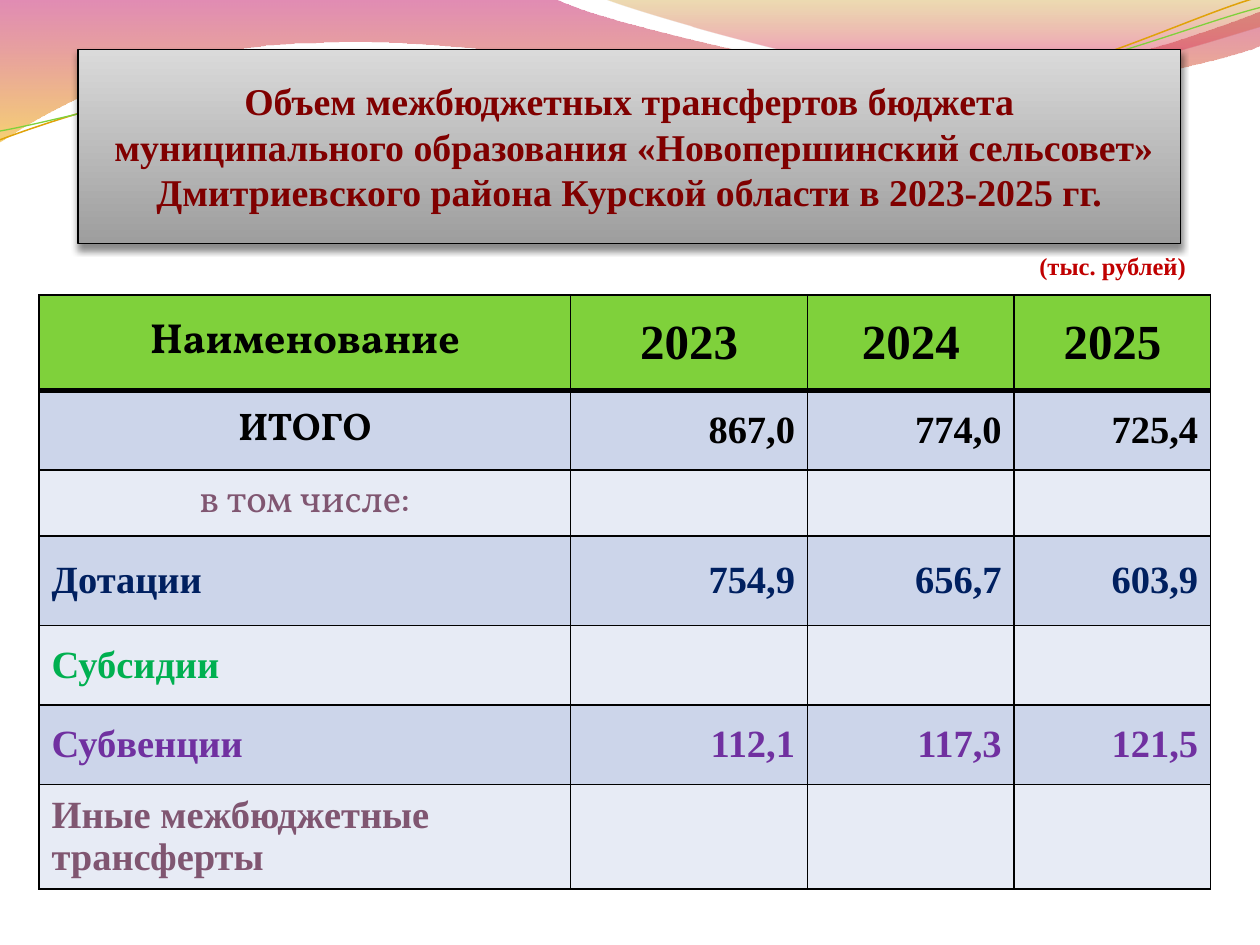
"""Build a slide with a budget transfer table under a decorated title."""
from typing import NamedTuple

import pptx
import pptx.dml.color
import pptx.enum.text
import pptx.oxml
import pptx.oxml.ns
import pptx.util
from pptx.util import Inches

COLORS = {
    "black": "000000", "maroon": "800000", "red": "C00000", "green": "7FD13B",
    "amber": "E0A209", "dark_band": "CCD5EA", "light_band": "E7EBF5",
    "mauve": "805671", "navy": "002060", "emerald": "00B050", "purple": "7030A0",
    "pink": "BD0059", "orange": "F0AB00", "ochre": "C38B00", "rose": "E1006B",
    "silver": "DADADA", "gray": "9E9E9E",
}
SERIF = "Times New Roman"
HEADING = "Vollkorn"
ALIGN = pptx.enum.text.PP_ALIGN
MIDDLE = pptx.enum.text.MSO_ANCHOR.MIDDLE


class Stop(NamedTuple):
    position: int
    color: str
    opacity: int


class Wave(NamedTuple):
    start: tuple
    segments: list
    stops: list


class Strand(NamedTuple):
    start: tuple
    segments: list
    color: str
    width: float


class Row(NamedTuple):
    label: str
    values: tuple
    height: float
    fill: str
    color: str
    label_font: str = SERIF
    label_align: ALIGN = ALIGN.LEFT
    value_align: ALIGN = ALIGN.RIGHT
    label_size: float = 22
    value_size: float = 22
    bold: bool = True


WAVES = [
    Wave((0, -0.01), [
        [(4.4, -0.01)],
        [(4.76, 0.17), (6.64, 0.63), (7.58, 0.63)],
        [(8.53, 0.63), (9.58, 0.26), (10, 0.09)],
        [(10.01, 0.36)],
        [(9.83, 0.44), (8.7, 0.76), (7.46, 0.75)],
        [(6.22, 0.75), (3.82, 0.28), (2.57, 0.34)],
        [(1.29, 0.35), (0.46, 0.83), (-0.01, 1.13)],
    ], [Stop(0, "pink", 45), Stop(100, "orange", 55)]),
    Wave((4.79, -0.01), [
        [(5.09, 0.11), (6.82, 0.62), (7.69, 0.65)],
        [(8.56, 0.69), (9.61, 0.32), (10, 0.21)],
        [(10, 0)],
    ], [Stop(0, "ochre", 30), Stop(80, "rose", 45)]),
]
STRANDS = [
    Strand((0, 1.11), [
        [(0.48, 0.93), (1.58, 0.57), (2.77, 0.52)],
        [(3.95, 0.47), (5.93, 0.89), (7.13, 0.8)],
        [(8.33, 0.71), (9.38, 0.15), (9.98, -0.02)],
    ], "amber", 0.85),
    Strand((0, 1.04), [
        [(0.47, 0.96), (1.64, 0.61), (2.83, 0.56)],
        [(4.03, 0.51), (5.97, 0.83), (7.17, 0.75)],
        [(8.36, 0.67), (9.41, 0.21), (10, 0.06)],
    ], "green", 0.75),
]
COLUMN_WIDTHS = [4.22, 1.88, 1.64, 1.56]
EMPTY = ("", "", "")
ROWS = [
    Row("Наименование", ("2023", "2024", "2025"), 0.76, "green", "black",
        HEADING, ALIGN.CENTER, ALIGN.CENTER, 24, 28),
    Row("ИТОГО", ("867,0", "774,0", "725,4"), 0.63, "dark_band", "black",
        HEADING, ALIGN.CENTER),
    Row("в том числе:", EMPTY, 0.47, "light_band", "mauve",
        HEADING, ALIGN.CENTER, bold=False),
    Row("Дотации", ("754,9", "656,7", "603,9"), 0.71, "dark_band", "navy"),
    Row("Субсидии", EMPTY, 0.63, "light_band", "emerald"),
    Row("Субвенции", ("112,1", "117,3", "121,5"), 0.63, "dark_band", "purple"),
    Row("Иные межбюджетные трансферты", EMPTY, 0.83, "light_band", "mauve"),
]


def rgb(color: str) -> pptx.dml.color.RGBColor:
    """Look up a named colour."""
    return pptx.dml.color.RGBColor.from_string(COLORS[color])


def xml(markup: str):
    """Parse an element whose first tag is in the drawing namespace."""
    tag, rest = markup.split(">", 1)
    return pptx.oxml.parse_xml(f"{tag} {pptx.oxml.ns.nsdecls('a')}>{rest}")


def format_font(font, color: str, **values) -> None:
    """Apply a colour and any other font values."""
    for name, value in values.items():
        setattr(font, name, value)
    font.color.rgb = rgb(color)


def fill_gradient(shape, stops: list) -> None:
    """Fill a shape with a gradient running from top to bottom."""
    shape.fill.gradient()
    shape.fill.gradient_angle = 270
    stop_list = shape._element.spPr.find(".//" + pptx.oxml.ns.qn("a:gsLst"))
    stop_list.clear()
    for stop in stops:
        stop_list.append(xml(
            f'<a:gs pos="{stop.position * 1000}"><a:srgbClr val="{COLORS[stop.color]}">'
            f'<a:alpha val="{stop.opacity * 1000}"/></a:srgbClr></a:gs>'))


def bend_segments(shape, segments: list) -> None:
    """Join the lines of each three-point segment into one cubic curve."""
    lines = iter(list(shape._element.iter(pptx.oxml.ns.qn("a:lnTo"))))
    for segment in segments:
        parts = [next(lines) for _ in segment]
        if len(parts) == 3:
            curve = xml("<a:cubicBezTo></a:cubicBezTo>")
            parts[0].addprevious(curve)
            for part in parts:
                curve.append(part[0])
                part.getparent().remove(part)


def draw_curve(page, curve, close: bool):
    """Draw the outline of a wave or a strand."""
    points = [(Inches(x), Inches(y)) for segment in curve.segments for x, y in segment]
    builder = page.shapes.build_freeform(*map(Inches, curve.start))
    builder.add_line_segments(points, close=close)
    shape = builder.convert_to_shape()
    bend_segments(shape, curve.segments)
    shape.shadow.inherit = False
    return shape


def draw_wave(page, wave: Wave) -> None:
    """Draw a translucent filled wave."""
    shape = draw_curve(page, wave, True)
    fill_gradient(shape, wave.stops)
    shape.line.fill.background()


def draw_strand(page, strand: Strand) -> None:
    """Draw a thin curved line."""
    shape = draw_curve(page, strand, False)
    shape.fill.background()
    shape.line.color.rgb = rgb(strand.color)
    shape.line.width = pptx.util.Pt(strand.width)


def draw_cell(cell, text: str, row: Row, is_label: bool, borders: dict) -> None:
    """Fill, border and write one table cell."""
    cell.fill.solid()
    cell.fill.fore_color.rgb = rgb(row.fill)
    cell.vertical_anchor = MIDDLE
    properties = cell._tc.get_or_add_tcPr()
    for index, (side, width) in enumerate(borders.items()):
        properties.insert(index, xml(
            f'<a:ln{side} w="{pptx.util.Pt(width)}"><a:solidFill>'
            f'<a:srgbClr val="{COLORS["black"]}"/></a:solidFill></a:ln{side}>'))
    if text:
        para = cell.text_frame.paragraphs[0]
        para.alignment = row.label_align if is_label else row.value_align
        span = para.add_run()
        span.text = text
        format_font(span.font, row.color, name=row.label_font if is_label else SERIF,
                    size=pptx.util.Pt(row.label_size if is_label else row.value_size),
                    bold=row.bold)


def draw_table(page) -> None:
    """Draw the table of transfers by year."""
    frame = page.shapes.add_table(
        len(ROWS), len(COLUMN_WIDTHS), Inches(0.31), Inches(2.34),
        Inches(sum(COLUMN_WIDTHS)), Inches(sum(row.height for row in ROWS)))
    table = frame.table
    for column, width in zip(table.columns, COLUMN_WIDTHS):
        column.width = Inches(width)
    for index, row in enumerate(ROWS):
        table.rows[index].height = Inches(row.height)
        borders = {"L": 1, "R": 1, "T": 3 if index == 1 else 1, "B": 3 if index == 0 else 1}
        for place, text in enumerate((row.label, *row.values)):
            draw_cell(table.cell(index, place), text, row, place == 0, borders)


def draw_title(page) -> None:
    """Place the title on its shaded plate, in front of the waves."""
    title = page.shapes.title
    page.shapes._spTree.append(title._element)
    bounds = {"left": 0.62, "top": 0.39, "width": 8.75, "height": 1.54}
    for name, value in bounds.items():
        setattr(title, name, Inches(value))
    fill_gradient(title, [Stop(0, "silver", 100), Stop(100, "gray", 100)])
    title.line.color.rgb = rgb("black")
    title.line.width = pptx.util.Pt(0.75)
    title._element.spPr.append(xml(
        '<a:effectLst><a:outerShdw blurRad="50800" dist="38100" dir="5400000" rotWithShape="0">'
        f'<a:srgbClr val="{COLORS["black"]}"><a:alpha val="45000"/></a:srgbClr>'
        '</a:outerShdw></a:effectLst>'))
    text = title.text_frame
    text.auto_size = pptx.enum.text.MSO_AUTO_SIZE.NONE
    text.vertical_anchor = MIDDLE
    para = text.paragraphs[0]
    para.alignment = ALIGN.CENTER
    lines = ("Объем межбюджетных трансфертов бюджета",
             " муниципального образования «Новопершинский сельсовет» "
             "Дмитриевского района Курской области в 2023-2025 гг.")
    for index, line in enumerate(lines):
        if index:
            para.add_line_break()
        span = para.add_run()
        span.text = line
        format_font(span.font, "maroon", name=SERIF, size=pptx.util.Pt(21.6), bold=True)


def draw_unit_note(page) -> None:
    """Write the unit of measure above the table."""
    box = page.shapes.add_textbox(Inches(8.15), Inches(1.94), Inches(1.42), Inches(0.33))
    box.text_frame.word_wrap = True
    span = box.text_frame.paragraphs[0].add_run()
    span.text = "(тыс. рублей)"
    format_font(span.font, "red", name=SERIF, size=pptx.util.Pt(14), bold=True)


def main() -> None:
    """Build and save the deck."""
    deck = pptx.Presentation()
    deck.slide_width, deck.slide_height = Inches(10), Inches(7.5)
    page = deck.slides.add_slide(deck.slide_layouts.get_by_name("Title Only"))
    for wave in WAVES:
        draw_wave(page, wave)
    for strand in STRANDS:
        draw_strand(page, strand)
    draw_table(page)
    draw_title(page)
    draw_unit_note(page)
    deck.save("out.pptx")


if __name__ == "__main__":
    main()
